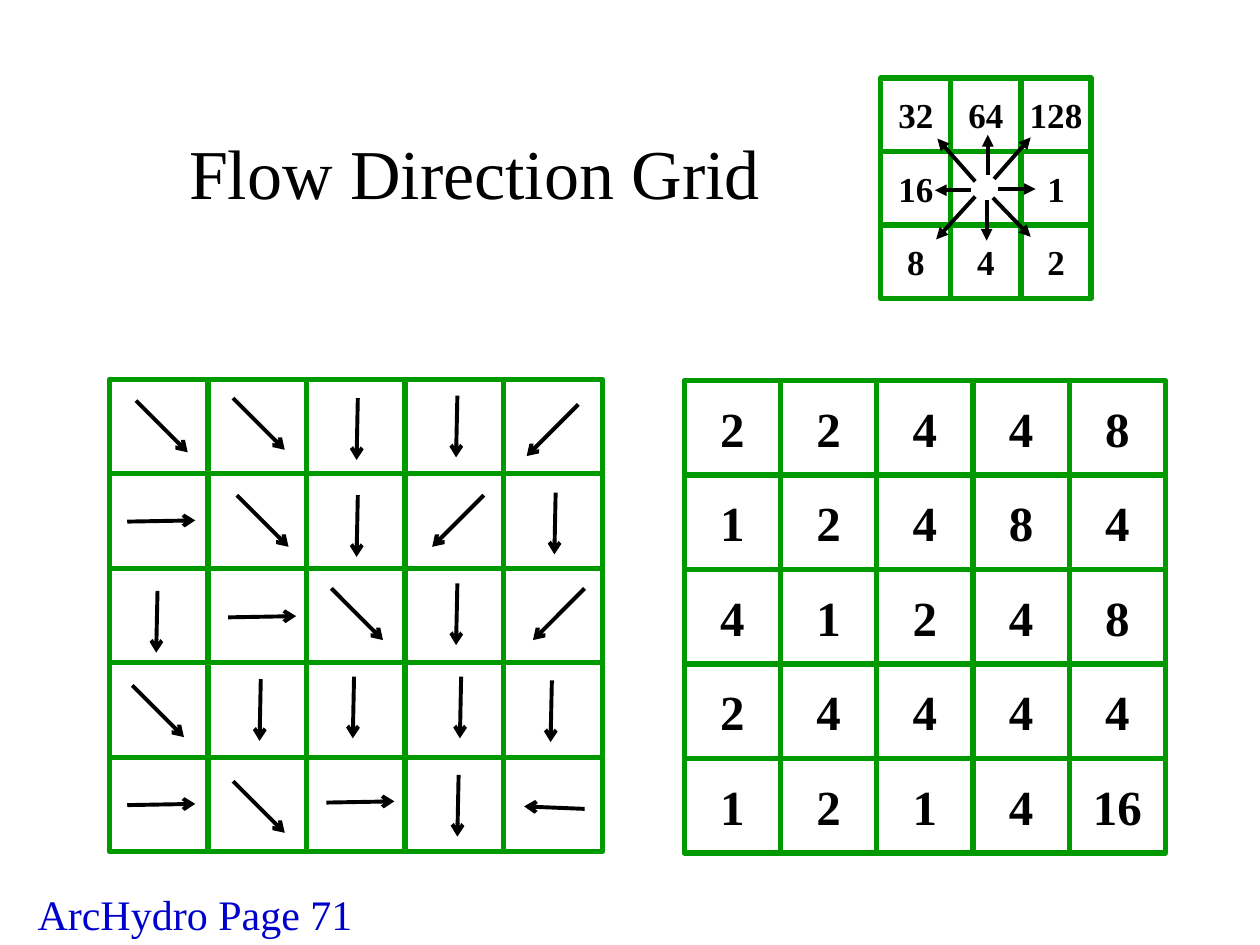
from lxml.etree import SubElement
from pptx import Presentation
from pptx.dml.color import RGBColor
from pptx.enum.shapes import MSO_CONNECTOR as Connector, MSO_SHAPE as Shape
from pptx.enum.text import MSO_ANCHOR as Anchor, MSO_AUTO_SIZE as AutoSize, PP_ALIGN as Align
from pptx.oxml.ns import qn
from pptx.util import Inches, Pt

FONT = "Times New Roman"
BLACK, GREEN, BLUE = "000000", "009900", "0000CC"

COMPASS_CODES = [["32", "64", "128"], ["16", "", "1"], ["8", "4", "2"]]
COMPASS_ARROWS = [
    (0.85, 0.77, 0.85, 0.45), (0.89, 0.95, 1.19, 1.26),
    (0.90, 0.80, 1.19, 0.47), (0.75, 0.94, 0.44, 1.28),
    (0.84, 0.97, 0.84, 1.29), (0.72, 0.89, 0.43, 0.89),
    (0.93, 0.88, 1.23, 0.88), (0.75, 0.82, 0.45, 0.48),
]
FLOW_CODES = [
    ["2", "2", "4", "4", "8"],
    ["1", "2", "4", "8", "4"],
    ["4", "1", "2", "4", "8"],
    ["2", "4", "4", "4", "4"],
    ["1", "2", "1", "4", "16"],
]
FLOW_STARTS = [
    [(0.21, 0.17), (0.98, 0.15), (1.97, 0.15), (2.76, 0.13), (3.72, 0.20)],
    [(0.14, 1.13), (1.01, 0.92), (1.97, 0.92), (2.97, 0.92), (3.54, 0.90)],
    [(0.38, 1.68), (0.94, 1.89), (1.76, 1.66), (2.76, 1.62), (3.77, 1.66)],
    [(0.18, 2.43), (1.20, 2.38), (1.94, 2.36), (2.79, 2.36), (3.51, 2.39)],
    [(0.14, 3.38), (0.98, 3.19), (1.72, 3.36), (2.77, 3.14), (3.77, 3.41)],
]
FLOW_STEPS = {
    "1": (0.54, -0.01), "2": (0.41, 0.41), "4": (-0.01, 0.49),
    "8": (-0.41, 0.41), "16": (-0.48, -0.02),
}


def color(value):
    """Return the colour of a hex string."""
    return RGBColor.from_string(value)


def write(frame, text, size, ink=BLACK, bold=False, align=Align.LEFT, anchor=Anchor.TOP):
    """Set and format one unwrapped line of text."""
    frame.text = text
    frame.word_wrap = False
    frame.auto_size = AutoSize.NONE
    frame.vertical_anchor = anchor
    line = frame.paragraphs[0]
    line.alignment = align
    for run in line.runs:
        run.font.name, run.font.size, run.font.bold = FONT, Pt(size), bold
        run.font.color.rgb = color(ink)


def add_arrow(group, left, top, ends, head):
    """Draw an arrow whose ends are relative to the left and top given."""
    x1, y1, x2, y2 = ends
    arrow = group.shapes.add_connector(
        Connector.STRAIGHT, Inches(left + x1), Inches(top + y1),
        Inches(left + x2), Inches(top + y2))
    arrow.line.color.rgb = color(BLACK)
    arrow.line.width = Pt(2.25)
    SubElement(arrow.line._ln, qn("a:tailEnd"), type=head)
    SubElement(arrow._element.spPr, qn("a:effectLst"))


def add_grid(slide, box, codes, size):
    """Draw a green grid of centred codes and return its group."""
    left, top, width, height = box
    group = slide.shapes.add_group_shape()
    cell_width, cell_height = width / len(codes[0]), height / len(codes)
    for row, row_codes in enumerate(codes):
        for column, code in enumerate(row_codes):
            cell = group.shapes.add_shape(
                Shape.RECTANGLE, Inches(left + column * cell_width),
                Inches(top + row * cell_height), Inches(cell_width), Inches(cell_height))
            cell.shadow.inherit = False
            cell.fill.background()
            cell.line.color.rgb = color(GREEN)
            cell.line.width = Pt(3)
            if code:
                write(cell.text_frame, code, size, bold=True,
                      align=Align.CENTER, anchor=Anchor.MIDDLE)
    return group


def add_compass(slide, box):
    """Draw the key of eight direction codes."""
    group = add_grid(slide, box, COMPASS_CODES, 20)
    for ends in COMPASS_ARROWS:
        add_arrow(group, box[0], box[1], ends, "triangle")


def add_flow_arrows(slide, box):
    """Draw the grid with one flow arrow in each cell."""
    group = add_grid(slide, box, [[""] * len(row) for row in FLOW_CODES], 28)
    for codes, starts in zip(FLOW_CODES, FLOW_STARTS):
        for code, (x, y) in zip(codes, starts):
            dx, dy = FLOW_STEPS[code]
            add_arrow(group, box[0], box[1], (x, y, x + dx, y + dy), "arrow")


def add_title(slide, box):
    """Place and format the slide title."""
    title = slide.shapes.title
    title.left, title.top, title.width, title.height = map(Inches, box)
    write(title.text_frame, "Flow Direction Grid", 40)


def add_reference(slide, box):
    """Place the page reference."""
    reference = slide.shapes.add_textbox(*map(Inches, box))
    write(reference.text_frame, "ArcHydro Page 71", 24, BLUE)


def main():
    """Build and save the slide."""
    deck = Presentation()
    deck.slide_width, deck.slide_height = Inches(10), Inches(7.5)
    slide = deck.slides.add_slide(deck.slide_layouts[5])
    add_grid(slide, (5.43, 3.02, 3.82, 3.75), FLOW_CODES, 28)
    add_title(slide, (1.4, 0.98, 4.74, 0.77))
    add_compass(slide, (6.99, 0.62, 1.67, 1.75))
    add_reference(slide, (0.2, 7, 2.7, 0.5))
    add_flow_arrows(slide, (0.87, 3.01, 3.91, 3.75))
    deck.save("out.pptx")


if __name__ == "__main__":
    main()
